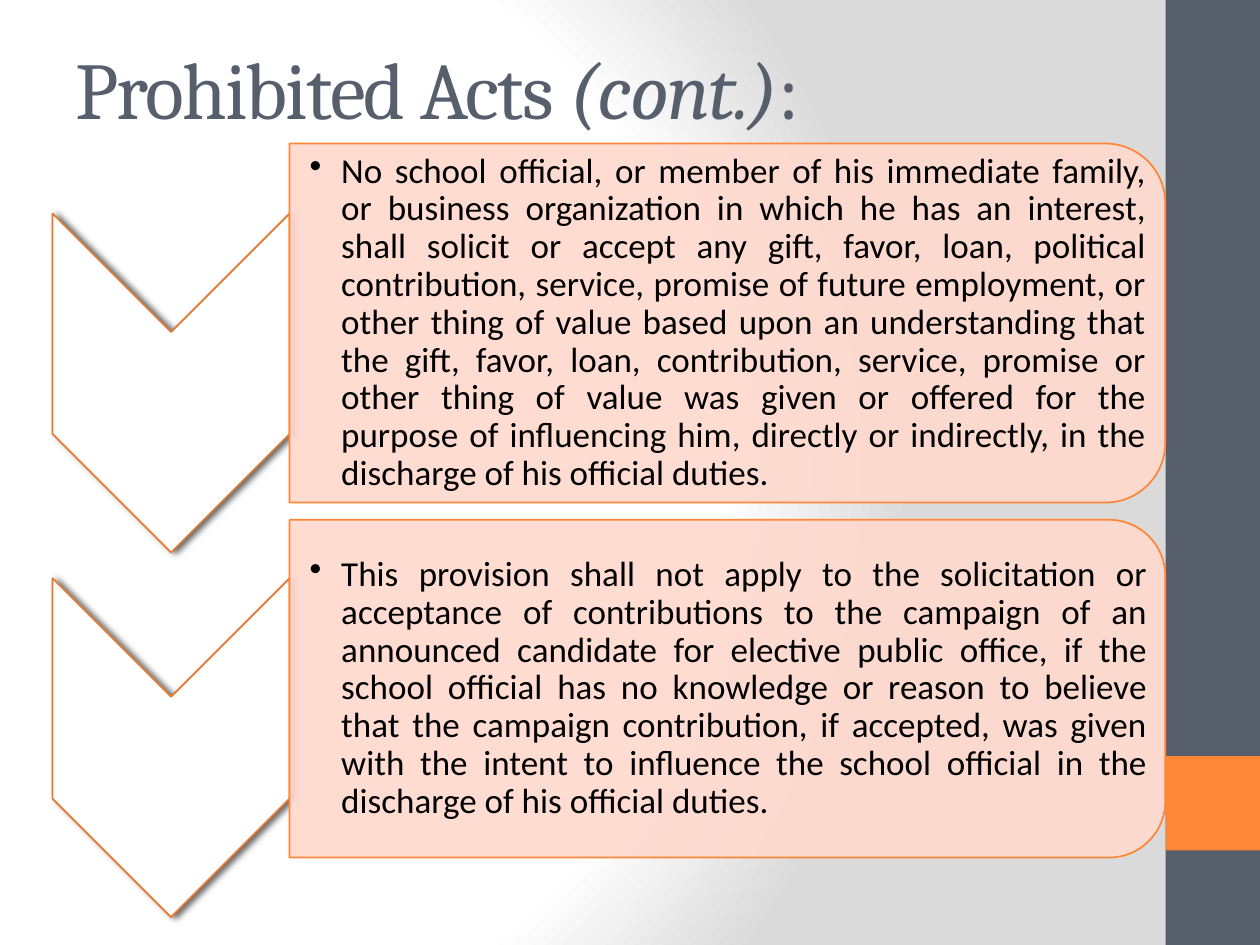
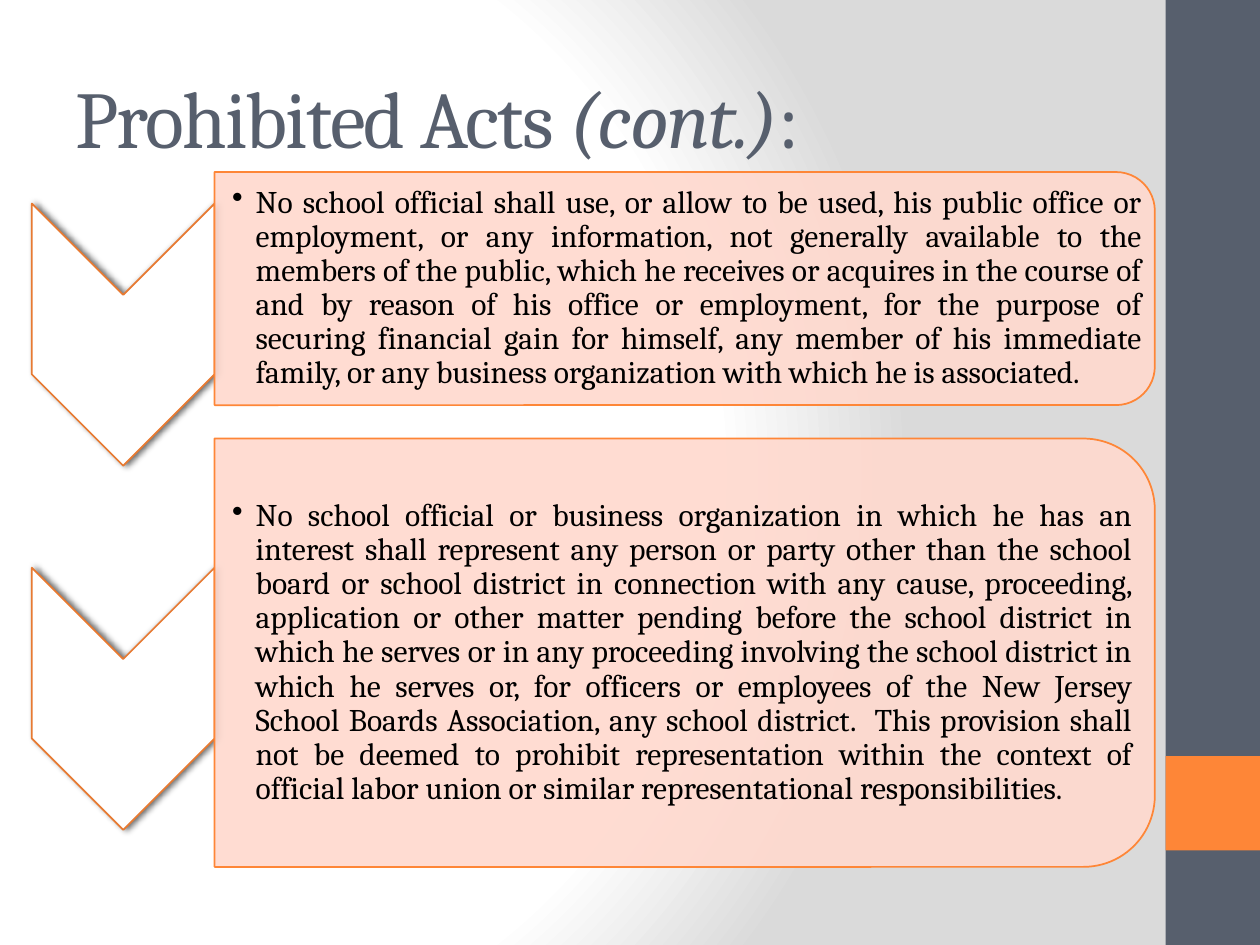
"""Build two slides on prohibited acts, with chevrons beside rounded text panels."""
from lxml import etree
from pptx import Presentation
from pptx.dml import color
from pptx.enum import shapes, text
from pptx.oxml import parse_xml
from pptx.oxml.ns import nsdecls, qn
from pptx.util import Pt

SLATE, ORANGE, RUST = "575F6D", "FE8637", "E77A32"
PEACH, WHITE, GREY, BLACK = "FFD9CE", "FFFFFF", "DADADA", "000000"
SERIF, SANS = "Cambria", "Calibri"
ROUNDING = 0.16667
CORNER_INSET = 0.29289
rgb = color.RGBColor.from_string


def add_block(slide, kind, left, top, width, height, fill, edge=None, turned=False):
    """Add a filled shape that covers the given area, turned a quarter if asked."""
    if turned:
        left, top = left + (width - height) / 2, top + (height - width) / 2
        width, height = height, width
    block = slide.shapes.add_shape(kind, Pt(left), Pt(top), Pt(width), Pt(height))
    block.rotation = 90 if turned else 0
    block.fill.solid()
    block.fill.fore_color.rgb = rgb(fill)
    if edge:
        block.line.color.rgb = rgb(edge)
        block.line.width = Pt(1)
    else:
        block.line.fill.background()
    block.shadow.inherit = False
    return block


def add_xml(parent, tag, **attributes):
    """Append a drawing element with the given attributes."""
    return etree.SubElement(parent, qn(tag), attributes)


PAGES = [
    {
        "title_height": 56, "font": SANS, "size": 20, "hang": 18, "margin": 11.5,
        "chevron": (30, 135.5, 193.7), "panel_width": 500.4,
        "rows": [
            (122, 82, 205.2, "No school official, or member of his immediate family, or business "
             "organization in which he has an interest, shall solicit or accept any gift, favor, "
             "loan, political contribution, service, promise of future employment, or other thing "
             "of value based upon an understanding that the gift, favor, loan, contribution, "
             "service, promise or other thing of value was given or offered for the purpose of "
             "influencing him, directly or indirectly, in the discharge of his official duties."),
            (330.4, 297, 193, "This provision shall not apply to the solicitation or acceptance of "
             "contributions to the campaign of an announced candidate for elective public office, "
             "if the school official has no knowledge or reason to believe that the campaign "
             "contribution, if accepted, was given with the intent to influence the school "
             "official in the discharge of his official duties."),
        ],
    },
    {
        "title_height": 90, "font": SERIF, "size": 18, "hang": 13.5, "margin": 10,
        "chevron": (18.2, 104.4, 149.8), "panel_width": 537.3,
        "rows": [
            (116.3, 98.3, 133.2, "No school official shall use, or allow to be used, his public "
             "office or employment, or any information, not generally available to the members of "
             "the public, which he receives or acquires in the course of and by reason of his "
             "office or employment, for the purpose of securing financial gain for himself, any "
             "member of his immediate family, or any business organization with which he is "
             "associated."),
            (324.4, 250.6, 244.8, "No school official or business organization in which he has an "
             "interest shall represent any person or party other than the school board or school "
             "district in connection with any cause, proceeding, application or other matter "
             "pending before the school district in which he serves or in any proceeding involving "
             "the school district in which he serves or, for officers or employees of the New "
             "Jersey School Boards Association, any school district.  This provision shall not be "
             "deemed to prohibit representation within the context of official labor union or "
             "similar representational responsibilities."),
        ],
    },
]

deck = Presentation()
deck.slide_width, deck.slide_height = Pt(720), Pt(540)
layout = deck.slide_layouts.get_by_name("Title Only")
slides = [deck.slides.add_slide(layout) for _ in PAGES]

master = deck.slide_master
stops = "".join(
    f'<a:gs pos="{place}"><a:srgbClr val="{shade}"/></a:gs>'
    for place, shade in [(0, WHITE), (75000, WHITE), (100000, GREY)]
)
common = master.element.find(qn("p:cSld"))
old_background = common.find(qn("p:bg"))
if old_background is not None:
    common.remove(old_background)
common.insert(0, parse_xml(
    f'<p:bg {nsdecls("p", "a")}><p:bgPr><a:gradFill rotWithShape="1"><a:gsLst>{stops}</a:gsLst>'
    '<a:path path="circle"><a:fillToRect l="20000" t="50000" r="100000" b="50000"/></a:path>'
    "</a:gradFill><a:effectLst/></p:bgPr></p:bg>"
))
for top, height, fill in [(0, 540, SLATE), (432, 54, ORANGE)]:
    band = add_block(slides[0], shapes.MSO_SHAPE.RECTANGLE, 666, top, 54, height, fill)
    master.shapes.element.append(band.element)

for slide, page in zip(slides, PAGES):
    title = slide.shapes.title
    title.left, title.top = Pt(36), Pt(21.6)
    title.width, title.height = Pt(600), Pt(page["title_height"])
    frame = title.text_frame
    frame.auto_size = text.MSO_AUTO_SIZE.NONE
    frame.vertical_anchor = text.MSO_ANCHOR.MIDDLE
    para = frame.paragraphs[0]
    para.alignment = text.PP_ALIGN.LEFT
    for words in ["Prohibited Acts ", "(cont.)", ":"]:
        span = para.add_run()
        span.text = words
        span.font.name, span.font.size = SERIF, Pt(46)
        span.font.italic = words == "(cont.)"
        span.font.color.rgb = rgb(SLATE)
        span.font._element.set("spc", "-100")

    chevron_left, chevron_width, chevron_height = page["chevron"]
    panel_left, panel_width = chevron_left + chevron_width, page["panel_width"]
    for chevron_top, panel_top, panel_height, words in page["rows"]:
        chevron = add_block(slide, shapes.MSO_SHAPE.CHEVRON, chevron_left, chevron_top,
                            chevron_width, chevron_height, WHITE, RUST, turned=True)
        effects = chevron.element.spPr.find(qn("a:effectLst"))
        shadow = add_xml(effects, "a:outerShdw", blurRad=str(Pt(4)), dist=str(Pt(2)),
                         dir="0", rotWithShape="0")
        add_xml(add_xml(shadow, "a:srgbClr", val=BLACK), "a:alpha", val="60000")

        panel = add_block(slide, shapes.MSO_SHAPE.ROUND_2_SAME_RECTANGLE, panel_left, panel_top,
                          panel_width, panel_height, PEACH, ORANGE, turned=True)
        panel.adjustments[0] = ROUNDING
        tint = panel.element.spPr.find(qn("a:solidFill")).find(qn("a:srgbClr"))
        add_xml(tint, "a:alpha", val="90000")

        inset = panel_height * ROUNDING * CORNER_INSET
        box = slide.shapes.add_textbox(Pt(panel_left), Pt(panel_top + inset),
                                       Pt(panel_width - inset), Pt(panel_height - 2 * inset))
        frame = box.text_frame
        frame.word_wrap = True
        frame.vertical_anchor = text.MSO_ANCHOR.MIDDLE
        frame.margin_left = Pt(page["margin"])
        frame.margin_top = frame.margin_right = frame.margin_bottom = Pt(0.9)
        para = frame.paragraphs[0]
        para.text = words
        para.level = 1
        para.alignment = text.PP_ALIGN.JUSTIFY
        para.line_spacing = 0.9
        font = para.runs[0].font
        font.name, font.size = page["font"], Pt(page["size"])
        font.color.rgb = rgb(BLACK)
        settings = para._p.get_or_add_pPr()
        settings.set("marL", str(Pt(page["hang"])))
        settings.set("indent", str(-Pt(page["hang"])))
        add_xml(settings, "a:buChar", char="•")

deck.save("out.pptx")
